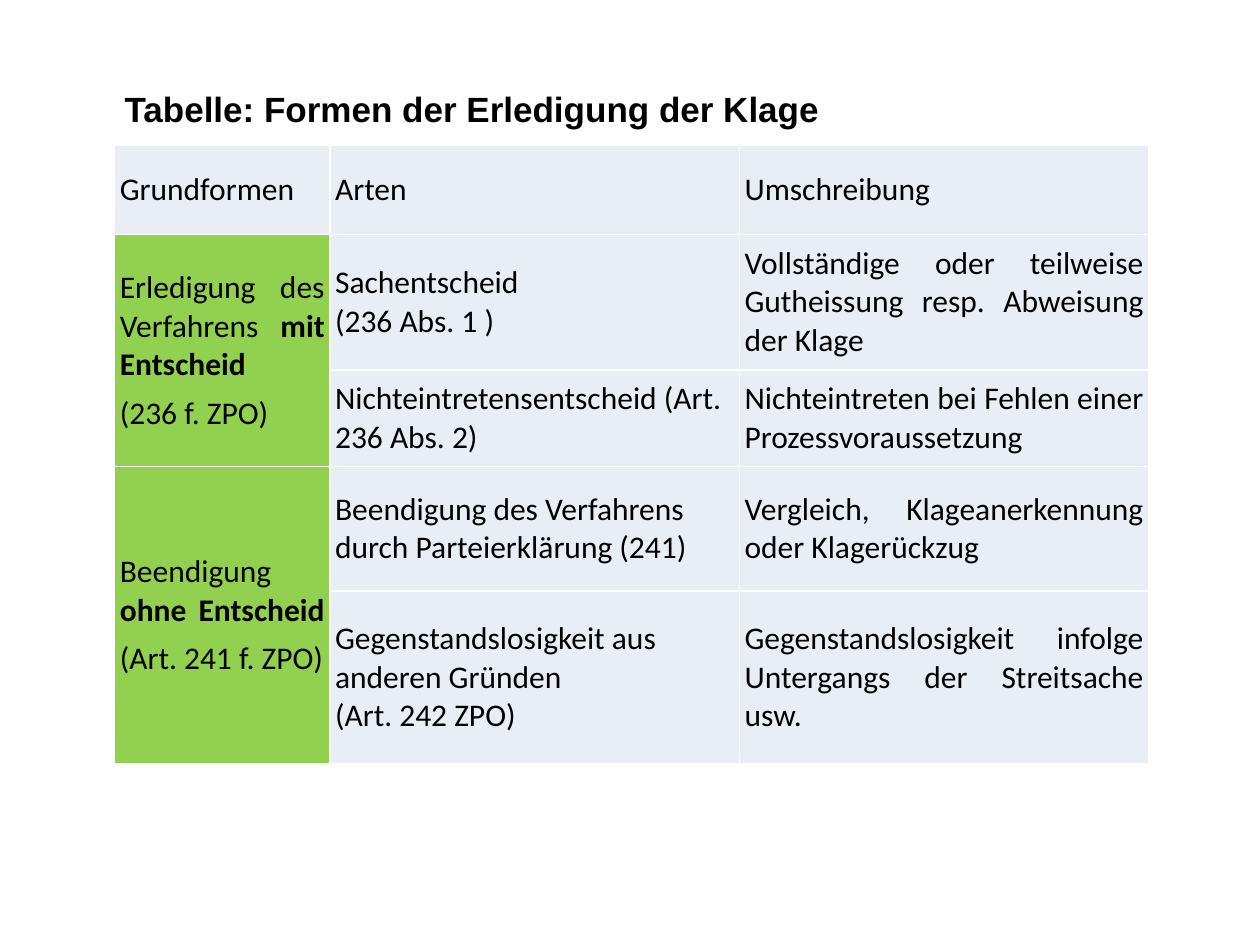
from lxml.etree import SubElement
from pptx import Presentation
from pptx.dml.color import RGBColor as Rgb
from pptx.enum.text import MSO_ANCHOR as Anchor, MSO_AUTO_SIZE as Fit, PP_ALIGN as Align
from pptx.oxml.ns import qn
from pptx.util import Pt

HUES = {"text": "000000", "line": "FFFFFF", "plain": "E9EDF4", "group": "92D050"}
COLS = [123, 234, 234]
ROWS = [51, 77, 55, 71, 99]
# Asterisks enclose bold words; each list item is one paragraph.
CELLS = [
    [["Grundformen "], ["Arten"], ["Umschreibung "]],
    [["Erledigung des Verfahrens *mit Entscheid *", "(236 f. ZPO)"],
     ["Sachentscheid \n(236 Abs. 1 )"],
     ["Vollständige oder teilweise Gutheissung resp. Abweisung der Klage "]],
    [None,
     ["Nichteintretensentscheid (Art. 236 Abs. 2)"],
     ["Nichteintreten bei Fehlen einer Prozessvoraussetzung"]],
    [["Beendigung *ohne Entscheid *", "(Art. 241 f. ZPO)"],
     ["Beendigung des Verfahrens durch Parteierklärung (241)"],
     ["Vergleich, Klageanerkennung oder Klagerückzug"]],
    [None,
     ["Gegenstandslosigkeit aus anderen Gründen \n(Art. 242 ZPO)"],
     ["Gegenstandslosigkeit infolge Untergangs der Streitsache usw."]],
]


def set_all(item, **vals):
    for name, val in vals.items():
        setattr(item, name, val)


def add_run(para, text, face, size, bold):
    run = para.add_run()
    run.text = text
    set_all(run.font, name=face, size=Pt(size), bold=bold)
    run.font.color.rgb = Rgb.from_string(HUES["text"])


def add_rich(para, text):
    """Write text with bold parts and line breaks."""
    for part, words in enumerate(text.split("*")):
        for num, line in enumerate(words.split("\n")):
            if num:
                para.add_line_break()
            if line:
                add_run(para, line, "Calibri", 18, part % 2 == 1)


def add_edges(cell):
    props = cell._tc.get_or_add_tcPr()
    for spot, side in enumerate(("lnL", "lnR", "lnT", "lnB")):
        edge = props.makeelement(qn("a:" + side), {"w": str(Pt(1))})
        fill = SubElement(edge, qn("a:solidFill"))
        SubElement(fill, qn("a:srgbClr"), val=HUES["line"])
        props.insert(spot, edge)


def fill_cell(cell, paras, hue, align):
    set_all(cell, vertical_anchor=Anchor.MIDDLE,
            margin_left=Pt(3), margin_right=Pt(3),
            margin_top=Pt(5.7), margin_bottom=Pt(5.7))
    cell.fill.solid()
    cell.fill.fore_color.rgb = Rgb.from_string(HUES[hue])
    add_edges(cell)
    frame = cell.text_frame
    for num, text in enumerate(paras or []):
        para = frame.add_paragraph() if num else frame.paragraphs[0]
        set_all(para, alignment=align, space_after=Pt(5.7))
        add_rich(para, text)


def add_grid(slide):
    grid = slide.shapes.add_table(len(ROWS), len(COLS), Pt(65.5), Pt(83),
                                  Pt(sum(COLS)), Pt(sum(ROWS))).table
    set_all(grid, first_row=False, horz_banding=False)
    for col, width in zip(grid.columns, COLS):
        col.width = Pt(width)
    for row, height in zip(grid.rows, ROWS):
        row.height = Pt(height)
    for top in (1, 3):
        grid.cell(top, 0).merge(grid.cell(top + 1, 0))
    for r, row in enumerate(CELLS):
        for c, paras in enumerate(row):
            hue = "group" if r and c == 0 else "plain"
            align = Align.LEFT if c == 1 else Align.JUSTIFY
            fill_cell(grid.cell(r, c), paras, hue, align)


def set_title(slide, text):
    title = slide.shapes.title
    set_all(title, left=Pt(64), top=Pt(45.5), width=Pt(580), height=Pt(55.5))
    frame = title.text_frame
    set_all(frame, word_wrap=True, auto_size=Fit.NONE,
            vertical_anchor=Anchor.TOP, margin_top=Pt(4.7))
    para = frame.paragraphs[0]
    para.alignment = Align.LEFT
    add_run(para, text, "Arial", 20, True)


def main():
    deck = Presentation()
    set_all(deck, slide_width=Pt(720), slide_height=Pt(540))
    slide = deck.slides.add_slide(deck.slide_layouts[5])
    set_title(slide, "Tabelle: Formen der Erledigung der Klage")
    add_grid(slide)
    deck.save("out.pptx")


if __name__ == "__main__":
    main()
